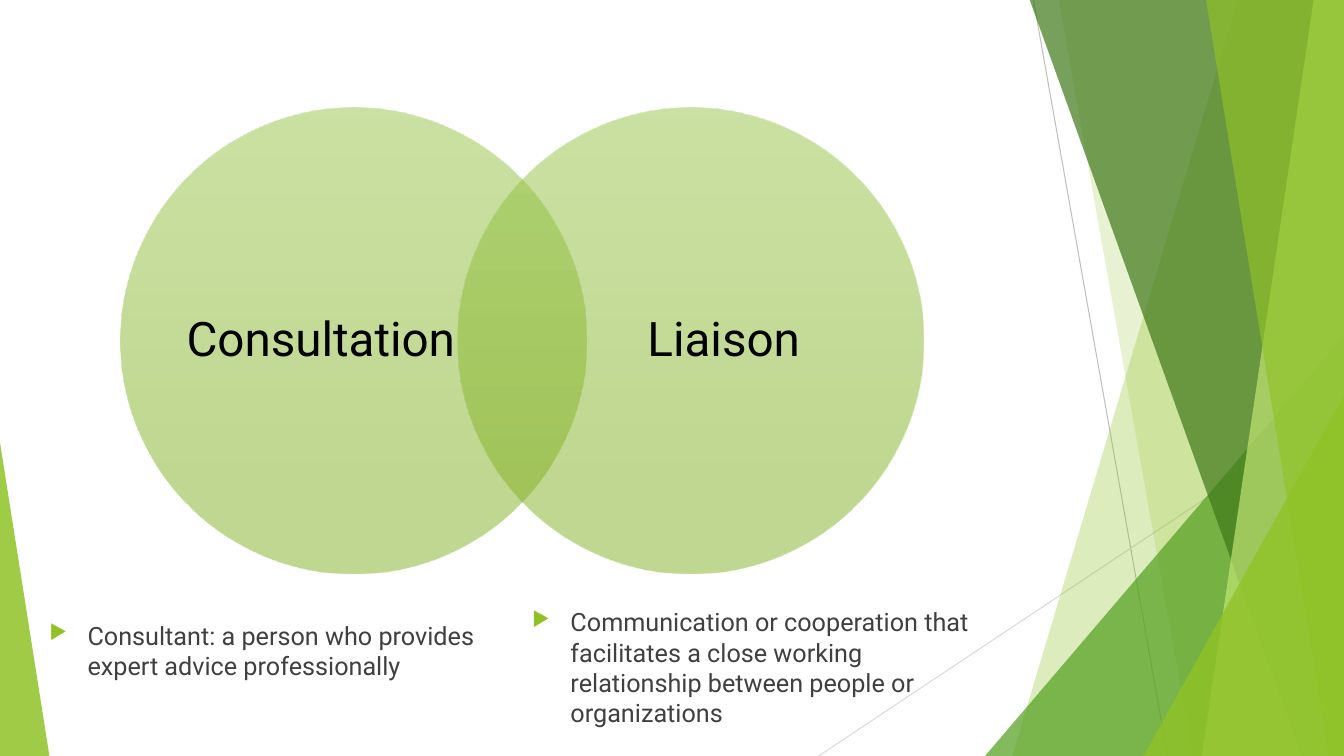
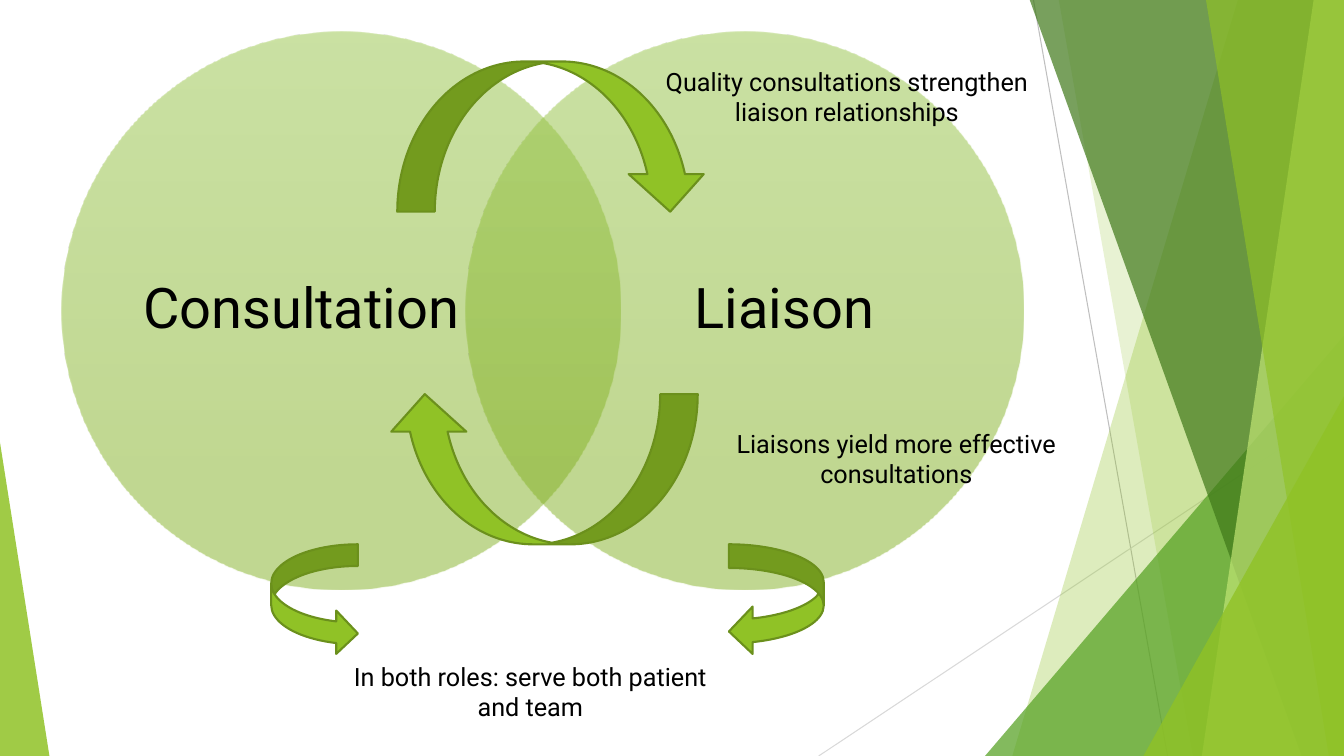
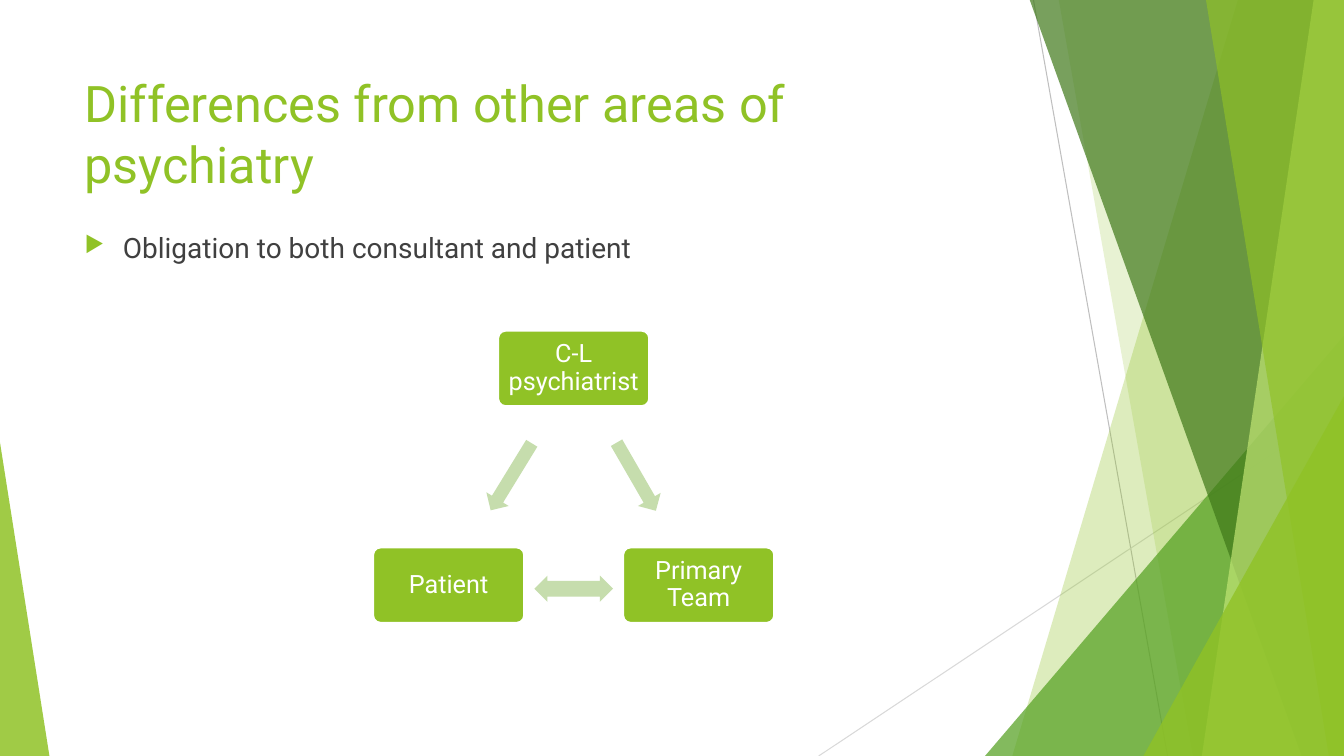
from lxml.etree import SubElement
from pptx import Presentation
from pptx.dml.color import RGBColor
from pptx.enum.shapes import MSO_CONNECTOR, MSO_SHAPE
from pptx.enum.text import MSO_ANCHOR, PP_ALIGN
from pptx.oxml.ns import qn
from pptx.util import Pt

PX = 9144  # EMU per px, 100 px to the inch
WIDTH, HEIGHT = 1333, 750
FONT = "Roboto"
COLORS = {
    "lime": "90C226", "leaf": "54A021", "forest": "3F7819", "pale": "C0E474",
    "outline": "6B901C", "sage": "C6DDAD", "venn_top": "97C547", "venn_end": "84B223",
    "body": "404040", "black": "000000", "white": "FFFFFF",
    "gray": "BFBFBF", "light_gray": "D9D9D9",
}

# Scenery shared by all slides, from back to front
RAYS = [((1025, 0), (1158, 750), "gray"), ((1333, 403), (812, 750), "light_gray")]
SCENERY = [  # band: top x, bottom x; peak: left, top, width, apex
    ("band", (1228, 1004), "lime", 30),
    ("band", (1050, 1183), "lime", 20),
    ("peak", (977, 333, 356, 1), "leaf", 72),
    ("band", (1021, 1291), "forest", 70),
    ("band", (1303, 1192), "pale", 70),
    ("band", (1196, 1318), "lime", 65),
    ("peak", (1134, 393, 199, 1), "lime", 80),
    ("peak", (0, 439, 49, 0), "lime", 85),
]

STYLES = {
    "title": {"size": 36, "color": "lime"},
    "bullet": {"size": 20, "color": "body", "paragraph": {"space_before": Pt(10)}},
    "note": {"size": 18, "color": "black", "paragraph": {"alignment": PP_ALIGN.CENTER}},
    "label": {"size": 34, "color": "black", "inset": 0,
              "frame": {"vertical_anchor": MSO_ANCHOR.MIDDLE},
              "paragraph": {"alignment": PP_ALIGN.CENTER, "line_spacing": 0.9}},
}
STYLES["definition"] = {**STYLES["bullet"], "size": 18}
STYLES["large label"] = {**STYLES["label"], "size": 40}
STYLES["node"] = {**STYLES["label"], "size": 18, "color": "white", "inset": 7}
BULLETED = ("bullet", "definition")

ROLES = ("Consultation", "Liaison")
DEFINITIONS = [
    ("Consultant: a person who provides expert advice professionally", (39, 610, 461, 230)),
    ("Communication or cooperation that facilitates a close working relationship "
     "between people or organizations", (518, 597, 461, 230)),
]
LOOP_ARROWS = [
    (MSO_SHAPE.CURVED_DOWN_ARROW, (394, 61, 308, 149), 0),
    (MSO_SHAPE.CURVED_DOWN_ARROW, (384, 391, 308, 149), 180),
    (MSO_SHAPE.CURVED_RIGHT_ARROW, (269, 540, 86, 110), 0),
    (MSO_SHAPE.CURVED_LEFT_ARROW, (723, 540, 94, 110), 0),
]
LOOP_NOTES = [
    ("In both roles: serve both patient and team", (329, 651)),
    ("Quality consultations strengthen liaison relationships", (643, 61)),
    ("Liaisons yield more effective consultations", (692, 420)),
]
NOTE_SIZE = (394, 71)
TITLE = "Differences from other areas of psychiatry"
OBLIGATION = "Obligation to both consultant and patient"
NODE_SIZE = (150, 75)
NODES = [("C-L psychiatrist", (494, 328)), ("Primary Team", (618, 543)), ("Patient", (370, 543))]
NODE_ARROW_SIZE = (78, 26)
NODE_ARROWS = [
    (MSO_SHAPE.RIGHT_ARROW, (592, 460), 60, ()),
    (MSO_SHAPE.LEFT_RIGHT_ARROW, (530, 571), 180, (0.6, 0.5)),
    (MSO_SHAPE.RIGHT_ARROW, (468, 460), 121.5, ()),
]


def emu(*lengths):
    return [round(length * PX) for length in lengths]


def rgb(name):
    return RGBColor.from_string(COLORS[name])


def apply_format(target, values):
    for name, value in values.items():
        setattr(target, name, value)


def set_line(line, color, width):
    line.color.rgb = rgb(color)
    line.width = Pt(width)


def set_opacity(shape, percent):
    """Give every colour set so far on the shape the same opacity."""
    for color in shape._element.spPr.iter(qn("a:srgbClr")):
        SubElement(color, qn("a:alpha"), val=str(percent * 1000))


def paint(shape, color, opacity=100):
    shape.shadow.inherit = False
    shape.fill.solid()
    shape.fill.fore_color.rgb = rgb(color)
    if opacity < 100:
        set_opacity(shape, opacity)
    shape.line.fill.background()


def add_preset(slide, kind, box, color, opacity=100, rotation=0, adjustments=()):
    shape = slide.shapes.add_shape(kind, *emu(*box))
    for index, value in enumerate(adjustments):
        shape.adjustments[index] = value
    shape.rotation = rotation
    paint(shape, color, opacity)
    return shape


def add_bullet(paragraph):
    properties = paragraph._p.get_or_add_pPr()
    indent = emu(38)[0]
    properties.set("marL", str(indent))
    properties.set("indent", str(-indent))
    bullet_color = SubElement(properties, qn("a:buClr"))
    SubElement(bullet_color, qn("a:srgbClr"), val=COLORS["lime"])
    SubElement(properties, qn("a:buSzPct"), val="80000")
    SubElement(properties, qn("a:buChar"), char="▶")


def write(frame, text, style_name):
    style = STYLES[style_name]
    apply_format(frame, {"word_wrap": True, **style.get("frame", {})})
    if "inset" in style:
        inset = emu(style["inset"])[0]
        apply_format(frame, {f"margin_{side}": inset
                             for side in ("left", "top", "right", "bottom")})
    paragraph = frame.paragraphs[0]
    apply_format(paragraph, style.get("paragraph", {}))
    if style_name in BULLETED:
        add_bullet(paragraph)
    run = paragraph.add_run()
    run.text = text
    apply_format(run.font, {"name": FONT, "size": Pt(style["size"])})
    run.font.color.rgb = rgb(style["color"])


def add_text(slide, text, box, style_name):
    write(slide.shapes.add_textbox(*emu(*box)).text_frame, text, style_name)


def add_scenery(slide):
    for start, end, color in RAYS:
        ray = slide.shapes.add_connector(MSO_CONNECTOR.STRAIGHT, *emu(*start, *end))
        set_line(ray.line, color, 0.75)
        SubElement(ray._element.spPr, qn("a:effectLst"))
    for kind, place, color, opacity in SCENERY:
        if kind == "band":
            top_x, bottom_x = place
            outline = slide.shapes.build_freeform(top_x, -1, scale=PX)
            outline.add_line_segments([(WIDTH, -1), (WIDTH, HEIGHT), (bottom_x, HEIGHT)])
            paint(outline.convert_to_shape(), color, opacity)
        else:
            left, top, width, apex = place
            add_preset(slide, MSO_SHAPE.ISOSCELES_TRIANGLE,
                       (left, top, width, HEIGHT - top), color, opacity, adjustments=[apex])


def add_venn(slide, left, top, diameter, label_style):
    """Draw two overlapping circles with labels pushed away from the overlap."""
    label_width = 0.578 * diameter
    margin = 0.14 * diameter
    label_offsets = (margin, diameter - margin - label_width)
    for index, (role, offset) in enumerate(zip(ROLES, label_offsets)):
        x = left + index * 0.723 * diameter
        circle = slide.shapes.add_shape(MSO_SHAPE.OVAL, *emu(x, top, diameter, diameter))
        circle.shadow.inherit = False
        circle.fill.gradient()
        circle.fill.gradient_angle = 270
        stops = zip(circle.fill.gradient_stops, (0, 0.78), ("venn_top", "venn_end"))
        for stop, position, color in stops:
            stop.position = position
            stop.color.rgb = rgb(color)
        set_opacity(circle, 50)
        circle.line.fill.background()
        add_text(slide, role, (x + offset, top + 0.118 * diameter,
                               label_width, 0.764 * diameter), label_style)


def build_definitions(slide):
    add_venn(slide, 120, 107, 462, "label")
    for text, box in DEFINITIONS:
        add_text(slide, text, box, "definition")


def build_loop(slide):
    add_venn(slide, 61, 31, 554, "large label")
    for kind, box, rotation in LOOP_ARROWS:
        arrow = add_preset(slide, kind, box, "lime", rotation=rotation)
        set_line(arrow.line, "outline", 1.5)
    for text, corner in LOOP_NOTES:
        add_text(slide, text, corner + NOTE_SIZE, "note")


def build_differences(slide):
    add_text(slide, TITLE, (74, 67, 940, 144), "title")
    add_text(slide, OBLIGATION, (74, 224, 940, 424), "bullet")
    for text, corner in NODES:
        node = add_preset(slide, MSO_SHAPE.ROUNDED_RECTANGLE, corner + NODE_SIZE,
                          "lime", adjustments=[0.1])
        set_line(node.line, "white", 1.5)
        write(node.text_frame, text, "node")
    for kind, corner, rotation, adjustments in NODE_ARROWS:
        add_preset(slide, kind, corner + NODE_ARROW_SIZE, "sage",
                   rotation=rotation, adjustments=adjustments)


def main():
    deck = Presentation()
    deck.slide_width, deck.slide_height = emu(WIDTH, HEIGHT)
    for build in (build_definitions, build_loop, build_differences):
        slide = deck.slides.add_slide(deck.slide_layouts[6])
        add_scenery(slide)
        build(slide)
    deck.save("out.pptx")


if __name__ == "__main__":
    main()
